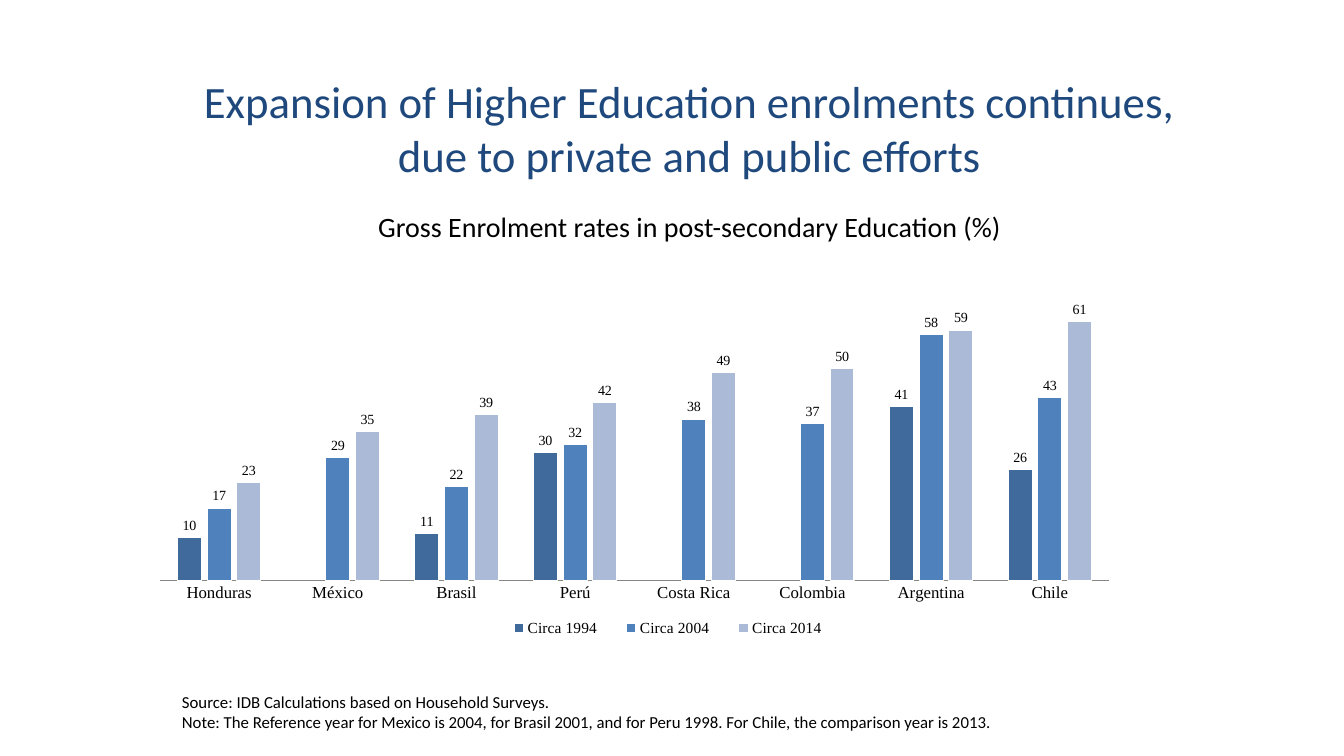
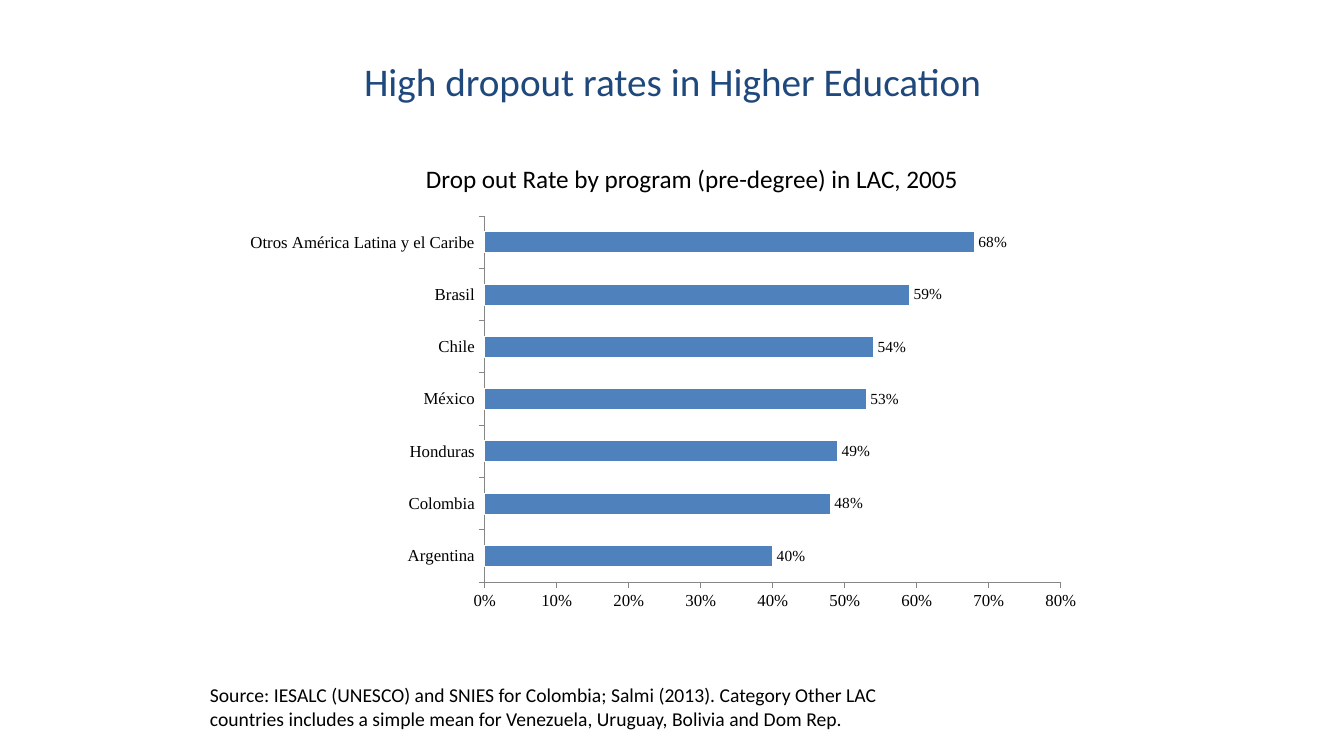
from lxml.etree import SubElement
from pptx import Presentation
from pptx.chart.data import CategoryChartData as ChartData
from pptx.dml.color import RGBColor
from pptx.enum.chart import XL_CHART_TYPE as ChartType
from pptx.enum.chart import XL_LABEL_POSITION as LabelPosition
from pptx.enum.chart import XL_LEGEND_POSITION as LegendPosition
from pptx.enum.chart import XL_TICK_MARK as TickMark
from pptx.enum.text import MSO_ANCHOR as Anchor
from pptx.enum.text import PP_ALIGN as Align
from pptx.oxml.ns import qn
from pptx.util import Pt

EMU_PER_PX = 914400 / 100.8
SLIDE_SIZE = 1344, 756
NAVY = RGBColor(0x1F, 0x49, 0x7D)
BLACK = RGBColor(0, 0, 0)
WHITE = RGBColor(255, 255, 255)
AXIS_GREY = RGBColor(0x86, 0x86, 0x86)
DARK_BLUE = RGBColor(0x40, 0x69, 0x9C)
BLUE = RGBColor(0x4F, 0x81, 0xBD)
PALE_BLUE = RGBColor(0xAA, 0xBA, 0xD7)
TEXT_FONT = "Calibri"
CHART_FONT = "Times New Roman"


def px(*lengths):
    return [round(length * EMU_PER_PX) for length in lengths]


def style_font(font, size, color=BLACK, name=CHART_FONT):
    font.size = Pt(size)
    font.name = name
    font.color.rgb = color


def add_text(slide, box, text, size, color=BLACK, align=Align.LEFT,
             anchor=Anchor.TOP, wrap=True):
    frame = slide.shapes.add_textbox(*px(*box)).text_frame
    frame.word_wrap = wrap
    frame.vertical_anchor = anchor
    frame.text = text
    for paragraph in frame.paragraphs:
        paragraph.alignment = align
        style_font(paragraph.font, size, color, TEXT_FONT)


def add_title(slide, box, text, size, anchor=Anchor.TOP):
    add_text(slide, box, text, size, NAVY, Align.CENTER, anchor)


def manual_layout(parent, position, fractions, inner=False):
    for old_layout in parent.findall(qn("c:layout")):
        parent.remove(old_layout)
    layout = SubElement(parent, qn("c:layout"))
    parent.insert(position, layout)
    manual = SubElement(layout, qn("c:manualLayout"))
    settings = [("layoutTarget", "inner")] if inner else []
    settings += [("xMode", "edge"), ("yMode", "edge")]
    settings += zip("xywh", fractions)
    for tag, value in settings:
        SubElement(manual, qn("c:" + tag)).set("val", str(value))


def style_axis(axis, tick):
    axis.has_major_gridlines = False
    axis.major_tick_mark = tick
    axis.minor_tick_mark = TickMark.NONE
    axis.format.line.color.rgb = AXIS_GREY
    axis.format.line.width = Pt(0.75)
    style_font(axis.tick_labels.font, 12)


def add_bars(slide, box, kind, categories, series, plot_area, maximum, step,
             number_format, label_size, tick, overlap=0):
    data = ChartData(number_format=number_format)
    data.categories = categories
    for name, values, _ in series:
        data.add_series(name, values)
    chart = slide.shapes.add_chart(kind, *px(*box), data).chart
    chart.has_title = False
    chart.has_legend = False
    style_font(chart.font, 10, name=TEXT_FONT)

    bars = chart.plots[0]
    bars.gap_width = 150
    bars.overlap = overlap
    bars.vary_by_categories = False
    for bar_series, (_, _, color) in zip(bars.series, series):
        bar_series.format.fill.solid()
        bar_series.format.fill.fore_color.rgb = color
        bar_series.format.line.color.rgb = WHITE
        bar_series.format.line.width = Pt(0.75)
    bars.has_data_labels = True
    labels = bars.data_labels
    labels.show_value = True
    labels.number_format = number_format
    labels.number_format_is_linked = False
    labels.position = LabelPosition.OUTSIDE_END
    style_font(labels.font, label_size)

    style_axis(chart.category_axis, tick)
    scale = chart.value_axis
    style_axis(scale, tick)
    scale.minimum_scale = 0
    scale.maximum_scale = maximum
    scale.major_unit = step
    scale.tick_labels.number_format = number_format
    scale.tick_labels.number_format_is_linked = False
    manual_layout(chart.element.find(".//" + qn("c:plotArea")), 0, plot_area, inner=True)
    return chart


def add_legend(chart, fractions):
    chart.has_legend = True
    chart.legend.position = LegendPosition.BOTTOM
    chart.legend.include_in_layout = False
    style_font(chart.legend.font, 11)
    manual_layout(chart.element.find(".//" + qn("c:legend")), 1, fractions)


def enrolment_slide(slide):
    add_title(slide, (179, 69, 1021, 140),
              "Expansion of Higher Education enrolments continues, "
              "due to private and public efforts", 32)
    add_text(slide, (261, 205, 857, 44),
             "Gross Enrolment rates in post-secondary Education (%)", 20,
             align=Align.CENTER)
    enrolment = add_bars(
        slide, (144, 253, 989, 391), ChartType.COLUMN_CLUSTERED,
        ["Honduras", "México", "Brasil", "Perú", "Costa Rica", "Colombia",
         "Argentina", "Chile"],
        [("Circa 1994", [10, None, 11, 30, None, None, 41, 26], DARK_BLUE),
         ("Circa 2004", [17, 29, 22, 32, 38, 37, 58, 43], BLUE),
         ("Circa 2014", [23, 35, 39, 42, 49, 50, 59, 61], PALE_BLUE)],
        plot_area=(0.016, 0.078, 0.96, 0.759), maximum=70, step=10,
        number_format="General", label_size=10, tick=TickMark.NONE, overlap=-25)
    enrolment.value_axis.visible = False
    add_legend(enrolment, (0.35, 0.93, 0.36, 0.06))
    add_text(slide, (172, 687, 860, 50),
             "Source: IDB Calculations based on Household Surveys.\n"
             "Note: The Reference year for Mexico is 2004, for Brasil 2001, and "
             "for Peru 1998. For Chile, the comparison year is 2013.", 12)


def dropout_slide(slide):
    add_title(slide, (219, 18, 907, 126),
              "High dropout rates in Higher Education", 28, Anchor.MIDDLE)
    add_bars(
        slide, (240, 196, 865, 449), ChartType.BAR_CLUSTERED,
        ["Argentina", "Colombia", "Honduras", "México", "Chile", "Brasil",
         "Otros América Latina y el Caribe"],
        [("Drop out Rate", [0.4, 0.48, 0.49, 0.53, 0.54, 0.59, 0.68], BLUE)],
        plot_area=(0.283, 0.045, 0.666, 0.815), maximum=0.8, step=0.1,
        number_format="0%", label_size=11, tick=TickMark.OUTSIDE)
    add_text(slide, (416, 158, 572, 40),
             "Drop out Rate by program (pre-degree) in LAC, 2005", 18, wrap=False)
    add_text(slide, (200, 678, 708, 57),
             "Source: IESALC (UNESCO) and SNIES for Colombia; Salmi (2013). "
             "Category Other LAC countries includes a simple mean for Venezuela, "
             "Uruguay, Bolivia and Dom Rep.", 14)


def main():
    deck = Presentation()
    deck.slide_width, deck.slide_height = px(*SLIDE_SIZE)
    blank = deck.slide_layouts[6]
    for build in (enrolment_slide, dropout_slide):
        build(deck.slides.add_slide(blank))
    deck.save("out.pptx")


if __name__ == "__main__":
    main()
